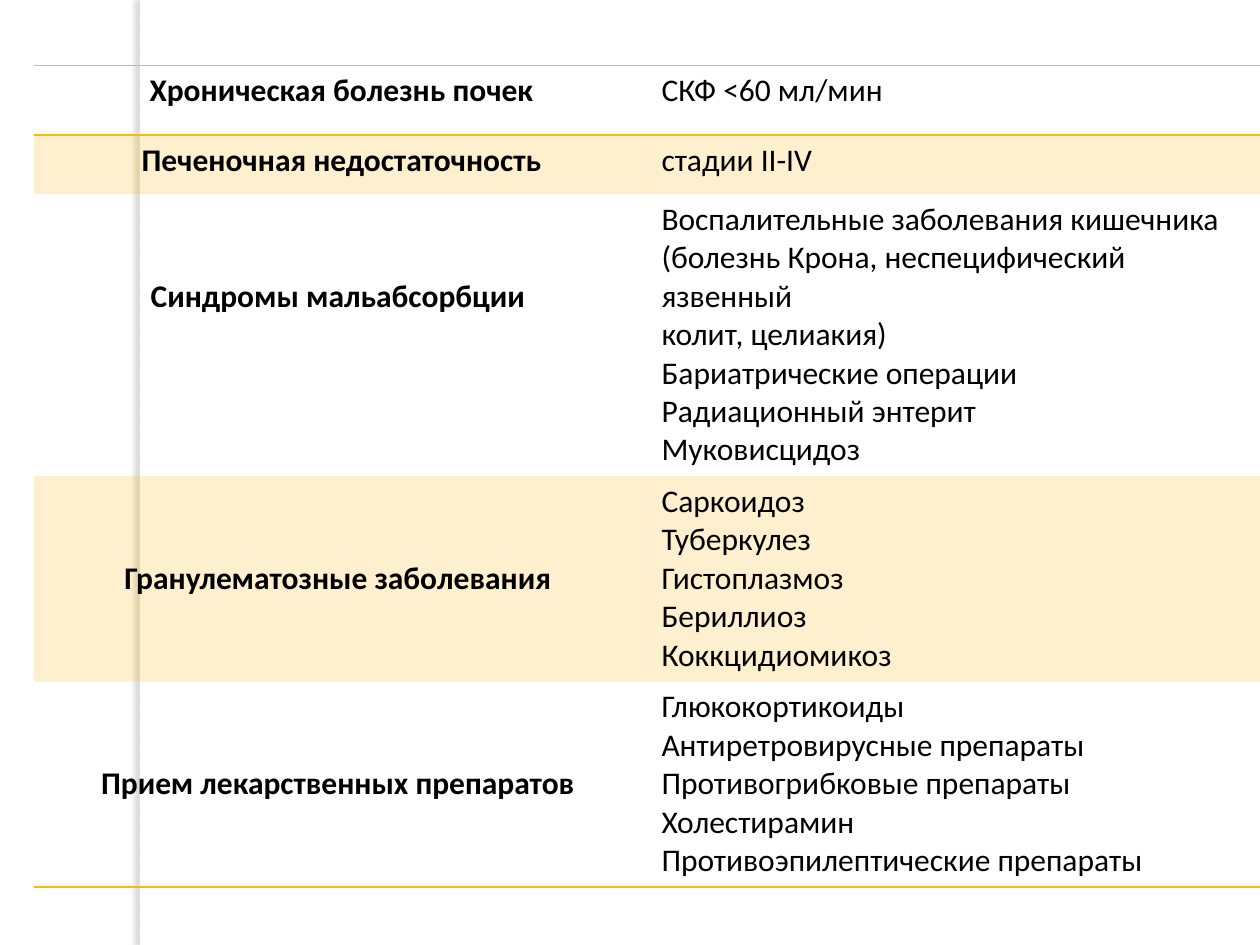
from dataclasses import dataclass

from lxml import etree
from pptx import Presentation
from pptx.dml.color import RGBColor
from pptx.enum.shapes import MSO_SHAPE
from pptx.enum.text import PP_ALIGN
from pptx.oxml.ns import qn
from pptx.util import Inches, Pt

RECT = MSO_SHAPE.RECTANGLE
CENTER, LEFT = PP_ALIGN.CENTER, PP_ALIGN.LEFT
BLANK_LAYOUT = 6
PLAIN_TABLE_STYLE = "{2D5ABB26-0587-4C30-8999-92F81FD0307C}"


@dataclass(frozen=True)
class Theme:
    font: str = "Calibri"
    size: float = 18
    text: str = "000000"
    accent: str = "FEB80A"
    band_alpha: int = 20
    strip: str = "FFFFFF"
    shadow: str = "736F63"
    rule: float = 1


THEME = Theme()
WIDTH, HEIGHT = 10, 7.5
TABLE_LEFT, TABLE_TOP, COLUMN = 0.27, 0.52, 4.88
LABEL_DROP = 0.66  # top margin that sets a label on the third line of its row

# label, details, row height
CAUSES = [
    ("Хроническая болезнь почек", ["СКФ <60 мл/мин"], 0.55),
    ("Печеночная недостаточность", ["стадии II-IV"], 0.47),
    ("Синдромы мальабсорбции ",
     ["Воспалительные заболевания кишечника",
      "(болезнь Крона, неспецифический язвенный",
      "колит, целиакия)", "Бариатрические операции",
      "Радиационный энтерит", "Муковисцидоз"], 2.24),
    ("Гранулематозные заболевания ",
     ["Саркоидоз", "Туберкулез", "Гистоплазмоз", "Бериллиоз",
      "Коккцидиомикоз"], 1.63),
    ("Прием лекарственных препаратов ",
     ["Глюкокортикоиды", "Антиретровирусные препараты",
      "Противогрибковые препараты", "Холестирамин",
      "Противоэпилептические препараты"], 1.63),
]


def add_color(parent, color, alpha=100):
    clr = etree.SubElement(parent, qn("a:srgbClr"), val=color)
    if alpha < 100:
        etree.SubElement(clr, qn("a:alpha"), val=str(alpha * 1000))


def add_strip(slide):
    """White vertical strip that casts a soft shadow to its left."""
    s = slide.shapes.add_shape(RECT, Inches(1.11), 0, Inches(0.08), Inches(HEIGHT))
    s.fill.solid()
    s.fill.fore_color.rgb = RGBColor.from_string(THEME.strip)
    s.line.fill.background()
    s.shadow.inherit = False
    effects = s._element.spPr.find(qn("a:effectLst"))
    shadow = etree.SubElement(
        effects, qn("a:outerShdw"), blurRad=str(Pt(3)), dist=str(Pt(3)),
        dir="10800000", algn="tl", rotWithShape="0")
    add_color(shadow, THEME.shadow, 25)


def add_borders(cell, edges):
    tc_pr = cell._tc.get_or_add_tcPr()
    for edge in edges:
        ln = etree.SubElement(tc_pr, qn(f"a:ln{edge}"), w=str(Pt(THEME.rule)))
        add_color(etree.SubElement(ln, qn("a:solidFill")), THEME.accent)


def fill_cell(cell, banded):
    if not banded:
        cell.fill.background()
        return
    fill = etree.SubElement(cell._tc.get_or_add_tcPr(), qn("a:solidFill"))
    add_color(fill, THEME.accent, THEME.band_alpha)


def write_lines(cell, lines, bold, align):
    tf = cell.text_frame
    tf.text = "\n".join(lines)
    for p in tf.paragraphs:
        p.alignment = align
        p.font.name = THEME.font
        p.font.size = Pt(THEME.size)
        p.font.bold = bold
        p.font.color.rgb = RGBColor.from_string(THEME.text)


def add_causes_table(slide):
    total = sum(height for _, _, height in CAUSES)
    table = slide.shapes.add_table(
        len(CAUSES), 2, Inches(TABLE_LEFT), Inches(TABLE_TOP),
        Inches(2 * COLUMN), Inches(total)).table
    table.first_row = table.horz_banding = False
    table._tbl.tblPr.find(qn("a:tableStyleId")).text = PLAIN_TABLE_STYLE
    edges = {0: "TB", len(CAUSES) - 1: "B"}
    for i, (label, details, height) in enumerate(CAUSES):
        table.rows[i].height = Inches(height)
        name, info = table.cell(i, 0), table.cell(i, 1)
        write_lines(name, [label], True, CENTER)
        write_lines(info, details, False, LEFT)
        if len(details) > 1:
            name.margin_top = Inches(LABEL_DROP)
        for cell in (name, info):
            add_borders(cell, edges.get(i, ""))
            fill_cell(cell, banded=i % 2 == 1)


def main():
    prs = Presentation()
    prs.slide_width, prs.slide_height = Inches(WIDTH), Inches(HEIGHT)
    slide = prs.slides.add_slide(prs.slide_layouts[BLANK_LAYOUT])
    add_strip(slide)
    add_causes_table(slide)
    prs.save("out.pptx")


if __name__ == "__main__":
    main()
